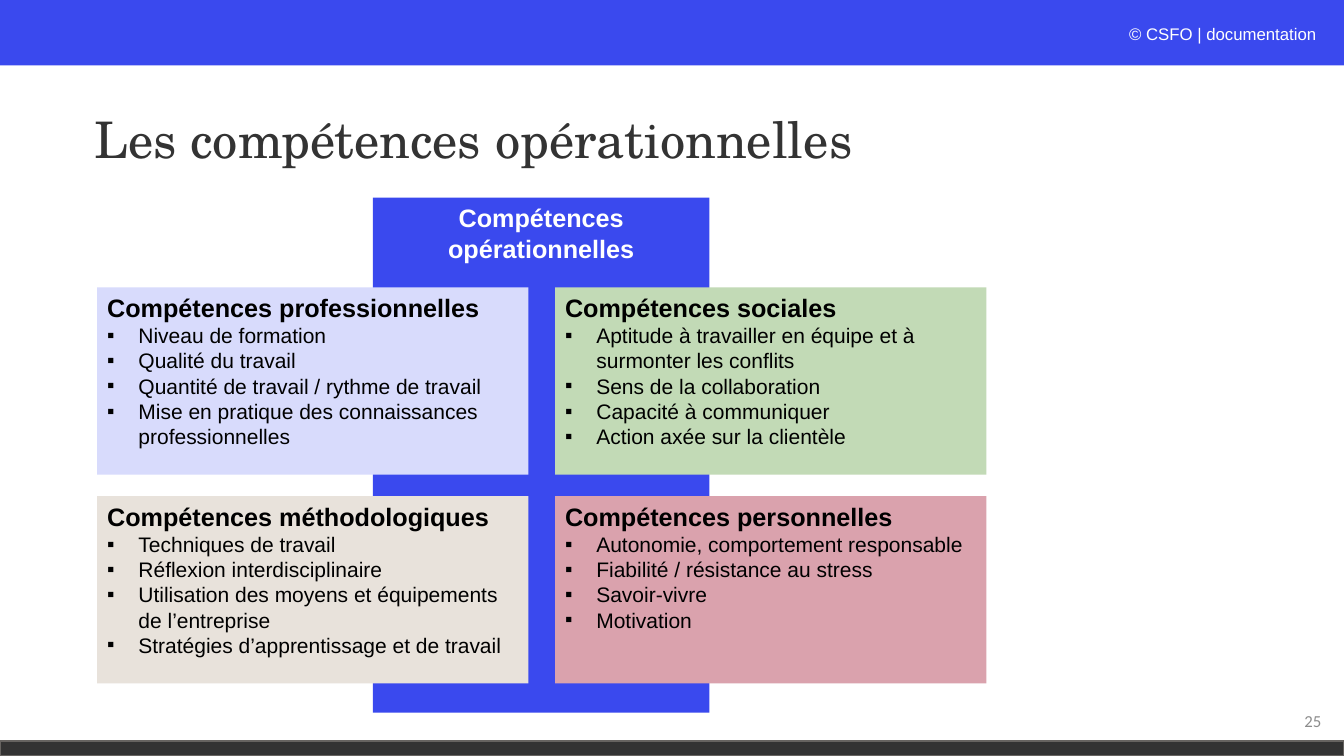
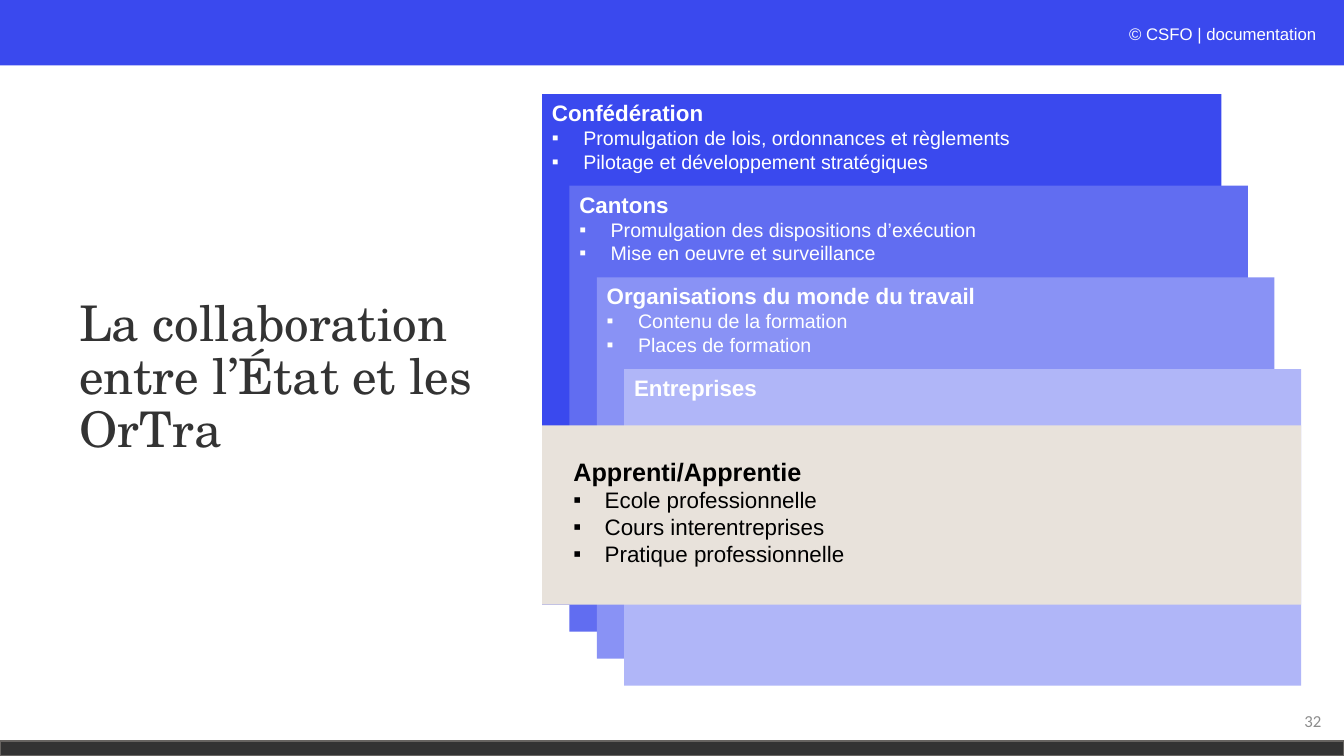
"""Build two slides on vocational competences and on the partners of training."""
from lxml import etree
from pptx import Presentation
from pptx import util as u
from pptx.dml.color import RGBColor
from pptx.enum import shapes, text as t
from pptx.oxml.ns import qn

BLUE, DARK, SAND, WHITE, BLACK, GREY = "3A49EE", "333333", "E8E2DB", "FFFFFF", "000000", "8C8C8C"
WIDTH, HEIGHT = 33.87, 19.05
INDENT = u.Cm(0.79)


def colour(code):
    return RGBColor.from_string(code)


def add_box(page, at, text="", bullets=(), fill=None, line=None, size=18, bullet_size=15,
            ink=BLACK, font="Arial", bold=False, align=t.PP_ALIGN.LEFT,
            anchor=t.MSO_ANCHOR.TOP, spacing=None, insets=(0.25, 0.13, 0.25, 0.13)):
    place = [u.Cm(length) for length in at]
    if fill:
        box = page.shapes.add_shape(shapes.MSO_SHAPE.RECTANGLE, *place)
        box.shadow.inherit = False
        box.fill.solid()
        box.fill.fore_color.rgb = colour(fill)
        if line:
            box.line.color.rgb = colour(line)
            box.line.width = u.Pt(1)
        else:
            box.line.fill.background()
    else:
        box = page.shapes.add_textbox(*place)
    frame = box.text_frame
    frame.word_wrap = True
    frame.vertical_anchor = anchor
    frame.margin_left, frame.margin_top, frame.margin_right, frame.margin_bottom = map(u.Cm, insets)
    headings = text.split("\n") if text else []
    for index, words in enumerate([*headings, *bullets]):
        para = frame.add_paragraph() if index else frame.paragraphs[0]
        para.alignment = align
        if spacing:
            para.line_spacing = spacing
        is_bullet = index >= len(headings)
        if is_bullet:
            props = para._p.get_or_add_pPr()
            props.set("marL", str(INDENT))
            props.set("indent", str(-INDENT))
            etree.SubElement(props, qn("a:buFont")).set("typeface", "Arial")
            etree.SubElement(props, qn("a:buChar")).set("char", "▪")
        span = para.add_run()
        span.text = words
        span.font.name = font
        span.font.size = u.Pt(bullet_size if is_bullet else size)
        span.font.bold = bold and not is_bullet
        span.font.color.rgb = colour(ink)


deck = Presentation()
deck.slide_width, deck.slide_height = u.Cm(WIDTH), u.Cm(HEIGHT)

titles = [
    ("Les compétences opérationnelles", (2.13, 1.75, 22.4, 3.68), 36, "25"),
    ("La collaboration entre l’État et les OrTra", (1.75, 7.01, 11.91, 5.05), 35.1, "32"),
]
pages = []
for title, place, size, number in titles:
    page = deck.slides.add_slide(deck.slide_layouts[6])
    pages.append(page)
    add_box(page, (0, 0, WIDTH, 1.65), fill=BLUE)
    add_box(page, (0, 18.67, WIDTH, 0.38), fill=DARK, line="666360")
    add_box(page, (21.89, 0.48, 11.66, 0.76), "© CSFO | documentation", size=12, ink=WHITE,
            align=t.PP_ALIGN.RIGHT, insets=(0.25, 0.13, 0.37, 0.13))
    add_box(page, (25.93, 17.65, 7.62, 1.02), number, size=12, ink=GREY, font="Calibri",
            align=t.PP_ALIGN.RIGHT, anchor=t.MSO_ANCHOR.MIDDLE)
    add_box(page, place, title, size=size, ink=DARK, font="TeX Gyre Schola",
            anchor=t.MSO_ANCHOR.MIDDLE, spacing=0.9)
skills_page, partners_page = pages

add_box(skills_page, (9.4, 4.98, 8.48, 12.98), "Compétences\nopérationnelles", fill=BLUE,
        ink=WHITE, bold=True, align=t.PP_ALIGN.CENTER)
skills = [
    ("Compétences professionnelles", "D8DBFC",
     ["Niveau de formation", "Qualité du travail", "Quantité de travail / rythme de travail",
      "Mise en pratique des connaissances professionnelles"]),
    ("Compétences sociales", "C2DAB6",
     ["Aptitude à travailler en équipe et à surmonter les conflits", "Sens de la collaboration",
      "Capacité à communiquer", "Action axée sur la clientèle"]),
    ("Compétences méthodologiques", SAND,
     ["Techniques de travail", "Réflexion interdisciplinaire",
      "Utilisation des moyens et équipements de l’entreprise",
      "Stratégies d’apprentissage et de travail"]),
    ("Compétences personnelles", "DAA2AD",
     ["Autonomie, comportement responsable", "Fiabilité / résistance au stress",
      "Savoir-vivre", "Motivation"]),
]
for index, (heading, fill, bullets) in enumerate(skills):
    row, column = divmod(index, 2)
    add_box(skills_page, (2.45 + 11.54 * column, 7.24 + 5.26 * row, 10.87, 4.72),
            heading, bullets, fill=fill, bold=True)

partners = [
    ("Confédération", BLUE,
     ["Promulgation de lois, ordonnances et règlements", "Pilotage et développement stratégiques"]),
    ("Cantons", "616DF1",
     ["Promulgation des dispositions d’exécution", "Mise en oeuvre et surveillance"]),
    ("Organisations du monde du travail", "8992F5",
     ["Contenu de la formation", "Places de formation"]),
    ("Entreprises", "B0B6F8", []),
]
for step, (heading, fill, bullets) in enumerate(partners):
    left, top = 13.66 + 0.69 * step, 2.37 + 2.31 * step
    right, bottom = 30.78 + 0.67 * step, 15.24 + 0.68 * step
    add_box(partners_page, (left, top, right - left, bottom - top), heading, bullets,
            fill=fill, size=16, bullet_size=14, ink=WHITE, bold=True)
add_box(partners_page, (13.66, 10.72, 19.13, 4.52), "Apprenti/Apprentie",
        ["Ecole professionnelle", "Cours interentreprises", "Pratique professionnelle"],
        fill=SAND, bullet_size=16, bold=True, insets=(0.79, 0.78, 0.25, 0.13))

deck.save("out.pptx")
